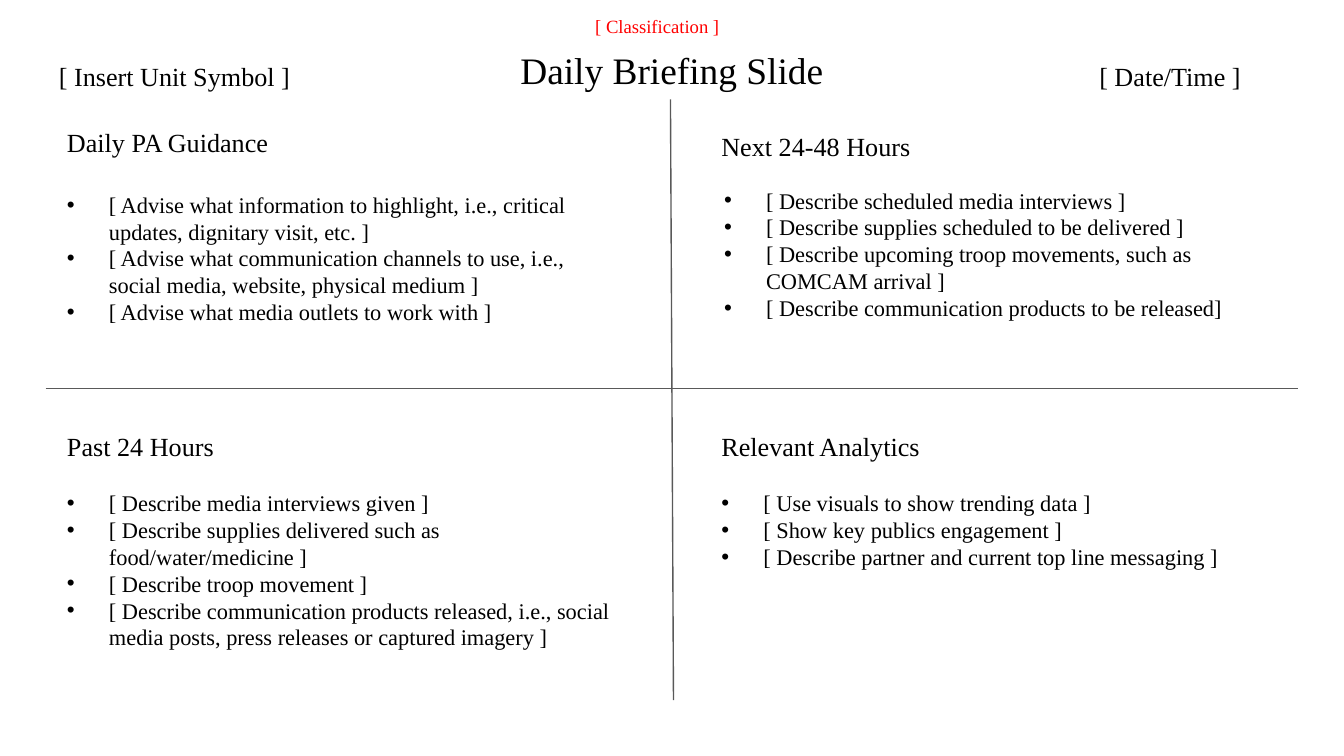
from collections import namedtuple

from lxml.etree import SubElement
from pptx import Presentation
from pptx.dml.color import RGBColor
from pptx.enum.shapes import MSO_CONNECTOR
from pptx.enum.text import MSO_AUTO_SIZE, PP_ALIGN
from pptx.oxml.ns import qn
from pptx.util import Pt

Box = namedtuple("Box", "left top width height")

BLACK = RGBColor(0x00, 0x00, 0x00)
RED = RGBColor(0xFF, 0x00, 0x00)
GRAY = RGBColor(0x59, 0x59, 0x59)
FONT = "Times New Roman"
BULLET_INDENT = 22.5
HEADING_HEIGHT = 31.7

QUADRANTS = [
    (Box(28.8, 60.5, 311.8, 118), 133.2, 38.2, 0, "Daily PA Guidance", [
        "[ Advise what information to highlight, i.e., critical updates, dignitary visit, etc. ]",
        "[ Advise what communication channels to use, i.e., social media, website, physical medium ]",
        "[ Advise what media outlets to work with ]",
    ]),
    (Box(379.4, 62.6, 313.9, 131.1), 184.3, 33.9, 1.4, "Next 24-48 Hours", [
        "[ Describe scheduled media interviews ]",
        "[ Describe supplies scheduled to be delivered ]",
        "[ Describe upcoming troop movements, such as COMCAM arrival ]",
        "[ Describe communication products to be released]",
    ]),
    (Box(28.8, 223.2, 311.8, 129.6), 113.8, 35.3, 0, "Past 24 Hours", [
        "[ Describe media interviews given ]",
        "[ Describe supplies delivered such as food/water/medicine ]",
        "[ Describe troop movement ]",
        "[ Describe communication products released, i.e., social media posts, "
        "press releases or captured imagery ]",
    ]),
    (Box(379.4, 223.2, 295.2, 86.4), 275.8, 35.3, 0, "Relevant Analytics", [
        "[ Use visuals to show trending data ]",
        "[ Show key publics engagement ]",
        "[ Describe partner and current top line messaging ]",
    ]),
]


def add_bullet(paragraph):
    """Give a paragraph a black round bullet and a hanging indent."""
    properties = paragraph._p.get_or_add_pPr()
    properties.set("marL", str(Pt(BULLET_INDENT)))
    properties.set("indent", str(-Pt(BULLET_INDENT)))
    color = SubElement(properties, qn("a:buClr"))
    SubElement(color, qn("a:srgbClr"), val=str(BLACK))
    SubElement(properties, qn("a:buFont"), typeface="Arial")
    SubElement(properties, qn("a:buChar"), char="•")


def add_text(slide, box, *lines, size=14, color=BLACK, align=PP_ALIGN.LEFT,
             inset=3.6, wrap=True, bullets=False):
    """Place lines of text in a box with one format."""
    textbox = slide.shapes.add_textbox(*(Pt(length) for length in box))
    frame = textbox.text_frame
    frame.word_wrap = wrap
    frame.auto_size = MSO_AUTO_SIZE.SHAPE_TO_FIT_TEXT
    frame.margin_left = frame.margin_right = Pt(7.2)
    frame.margin_top = frame.margin_bottom = Pt(inset)
    for index, line in enumerate(lines):
        paragraph = frame.add_paragraph() if index else frame.paragraphs[0]
        if bullets:
            add_bullet(paragraph)
        paragraph.alignment = align
        run = paragraph.add_run()
        run.text = line
        run.font.name = FONT
        run.font.size = Pt(size)
        run.font.color.rgb = color


def add_divider(slide, *ends):
    """Draw a thin gray line between two points."""
    divider = slide.shapes.add_connector(
        MSO_CONNECTOR.STRAIGHT, *(Pt(end) for end in ends))
    divider.line.color.rgb = GRAY
    divider.line.width = Pt(0.75)
    SubElement(divider._element.spPr, qn("a:effectLst"))


def add_dividers(slide, box):
    """Split a box into four quadrants with a slightly slanted upright."""
    middle = box.left + box.width / 2
    across = box.top + 154.8
    add_divider(slide, middle + 0.8, box.top + box.height, middle - 0.8, box.top)
    add_divider(slide, box.left, across, box.left + box.width, across)


def add_header(slide, box):
    """Place the classification, unit symbol, title and date in the header box."""
    left, top, width, _ = box
    label_top = top + 24.5
    add_text(slide, Box(left + 287.3, top, 82.1, 19.4), "[ Classification ]",
             size=10, color=RED, wrap=False)
    add_text(slide, Box(left, label_top, 139.7, 24.5), "[ Insert Unit Symbol ]")
    add_text(slide, Box(left + width - 92.9, label_top, 92.9, 24.5), "[ Date/Time ]")
    add_text(slide, Box(left + 227.5, top + 17.3, 216, 31.7), "Daily Briefing Slide",
             size=20, align=PP_ALIGN.CENTER)


def add_quadrant(slide, box, heading_width, body_offset, body_shift, heading, points):
    """Place a heading and its bullet points in a quadrant box."""
    add_text(slide, Box(box.left, box.top, heading_width, HEADING_HEIGHT),
             heading, inset=7.2)
    body = Box(box.left + body_shift, box.top + body_offset,
               box.width - body_shift, box.height - body_offset)
    add_text(slide, body, *points, size=12, bullets=True)


def main():
    """Build the daily briefing slide."""
    presentation = Presentation()
    presentation.slide_width = Pt(720)
    presentation.slide_height = Pt(405)
    slide = presentation.slides.add_slide(presentation.slide_layouts[6])
    add_dividers(slide, Box(24.5, 53.3, 671, 321.8))
    for quadrant in QUADRANTS:
        add_quadrant(slide, *quadrant)
    add_header(slide, Box(24.5, 4.3, 650.2, 49))
    presentation.save("out.pptx")


if __name__ == "__main__":
    main()
